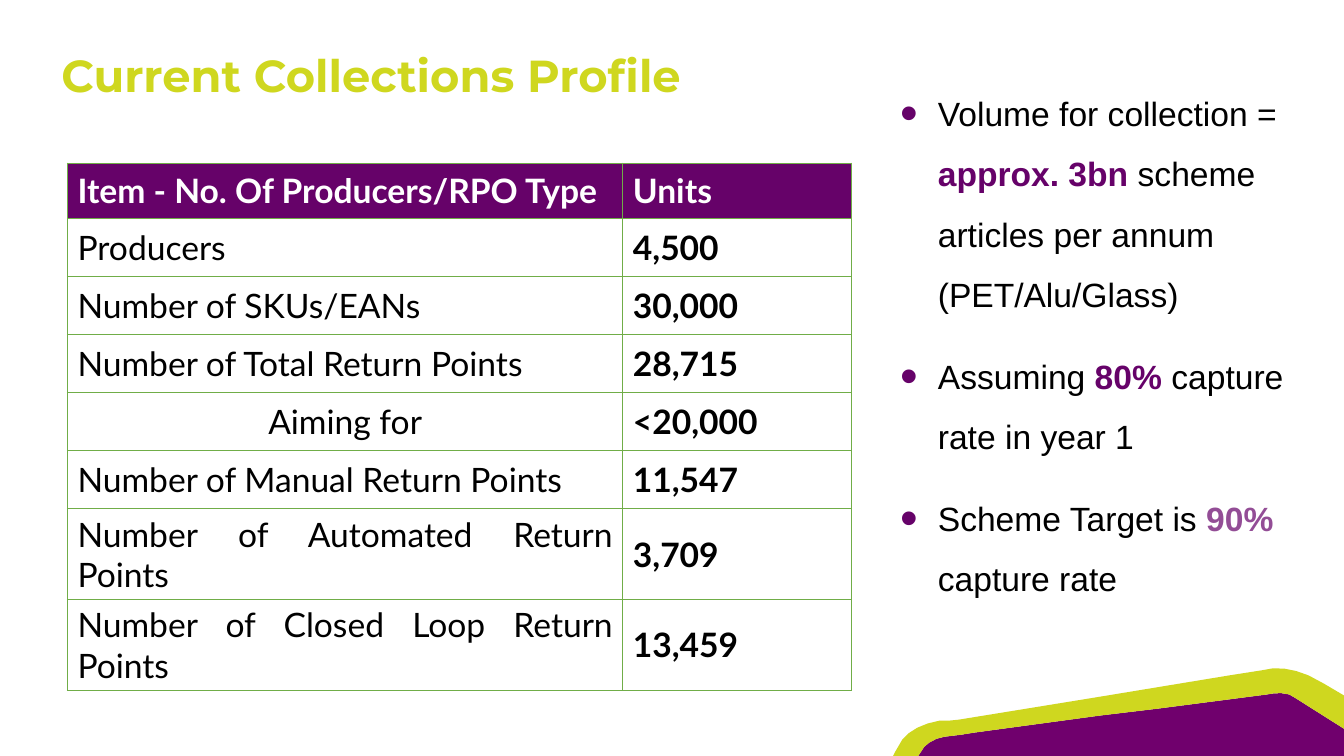
from lxml import etree
from pptx import Presentation
from pptx.dml.color import RGBColor
from pptx.enum.text import MSO_ANCHOR, PP_ALIGN
from pptx.oxml.ns import qn
from pptx.util import Pt

MIDDLE = MSO_ANCHOR.MIDDLE
JUSTIFY, CENTER = PP_ALIGN.JUSTIFY, PP_ALIGN.CENTER
COLORS = {"lime": "CFD71F", "plum": "70006D", "head": "660269", "mauve": "934D96",
          "grid": "70AD47", "black": "000000", "white": "FFFFFF"}


def style(run, face, size, color, bold=False):
    font = run.font
    font.name, font.size, font.bold = face, Pt(size), bold
    font.color.rgb = RGBColor.from_string(COLORS[color])


def add(parent, tag, **attrs):
    return etree.SubElement(parent, qn(tag), attrs)


deck = Presentation()
deck.slide_width, deck.slide_height = Pt(960), Pt(540)
slide = deck.slides.add_slide(deck.slide_layouts[6])
shapes = slide.shapes

# Title
title = shapes.add_textbox(Pt(36.7), Pt(30.2), Pt(738), Pt(46)).text_frame
title.word_wrap = True
title.text = "Current Collections Profile"
style(title.paragraphs[0].runs[0], "Montserrat", 32, "lime", True)

# Corner swoosh: a plum body with a lime band along its upper edge
inner = [(655.9, 540), (660.2, 533.5), (663.8, 530.5), (668.9, 527.8), (674.6, 526.3),
         (686.2, 524.9), (695.5, 523.4), (785.5, 511.2), (827.3, 506.2), (905, 496.1),
         (909.4, 495.4), (915, 495.1), (920.9, 496.1), (925.2, 498.6), (960, 520.6)]
outer = [(637.9, 540), (639.4, 537.1), (644.4, 528.5), (649.1, 523.7), (655.3, 519.8),
         (662.7, 516.8), (671, 514.8), (677.5, 514.8), (684.7, 514.1), (782.6, 498.2),
         (878.4, 482.4), (901.4, 478.8), (909.1, 477.4), (917.2, 477.6), (925.8, 479.3),
         (934.6, 482.4), (945.4, 488.2), (960, 496.8)]
for edge, color in ((inner + [(960, 540)], "plum"), (outer + inner[::-1], "lime")):
    points = [(Pt(x), Pt(y)) for x, y in edge]
    build = shapes.build_freeform(*points[0])
    build.add_line_segments(points[1:])
    swoosh = build.convert_to_shape()
    swoosh.shadow.inherit = False
    swoosh.fill.solid()
    swoosh.fill.fore_color.rgb = RGBColor.from_string(COLORS[color])
    swoosh.line.fill.background()

# Bullet list
bullets = [
    [("Volume for collection = ", "black"), ("approx. 3bn ", "head"),
     ("scheme articles per annum (PET/Alu/Glass)", "black")],
    [("Assuming ", "black"), ("80% ", "head"), ("capture rate in year 1", "black")],
    [("Scheme Target is ", "black"), ("90% ", "mauve"), ("capture rate", "black")],
]
notes = shapes.add_textbox(Pt(637.9), Pt(89.7), Pt(284.4), Pt(300)).text_frame
notes.word_wrap = True
notes.vertical_anchor = MIDDLE
notes.margin_left = notes.margin_right = Pt(5)
notes.margin_top = notes.margin_bottom = Pt(2.2)
for i, parts in enumerate(bullets):
    para = notes.add_paragraph() if i else notes.paragraphs[0]
    props = para._p.get_or_add_pPr()
    props.set("marL", str(Pt(27)))
    props.set("indent", str(Pt(-27)))
    add(add(props, "a:buClr"), "a:srgbClr", val=COLORS["head"])
    add(props, "a:buSzPct", val="150000")
    add(props, "a:buFont", typeface="Arial")
    add(props, "a:buChar", char="•")
    para.line_spacing = 1.5
    if i:
        para.space_before = Pt(15)
    for text, color in parts:
        run = para.add_run()
        run.text = text
        style(run, "Arial", 24, color, color != "black")

# Table
rows = [
    ("Item - No. Of Producers/RPO Type", "Units", 39.4),
    ("Producers", "4,500", 41.5),
    ("Number of SKUs/EANs", "30,000", 41.5),
    ("Number of Total Return Points", "28,715", 41.5),
    ("Aiming for", "<20,000", 41.5),
    ("Number of Manual Return Points", "11,547", 41.5),
    ("Number of Automated Return Points", "3,709", 64.8),
    ("Number of Closed Loop Return Points", "13,459", 64.8),
]
total = sum(row[2] for row in rows)
table = shapes.add_table(len(rows), 2, Pt(48.2), Pt(116.6), Pt(560.2), Pt(total)).table
table.horz_banding = False
table.columns[0].width, table.columns[1].width = Pt(396.7), Pt(163.5)
for r, (item, units, height) in enumerate(rows):
    table.rows[r].height = Pt(height)
    for c, text in enumerate((item, units)):
        cell = table.cell(r, c)
        cell.text = text
        cell.vertical_anchor = MIDDLE
        para = cell.text_frame.paragraphs[0]
        para.alignment = CENTER if text == "Aiming for" else JUSTIFY
        style(para.runs[0], "Lato", 24, "black" if r else "white", r == 0 or c == 1)
        props = cell._tc.get_or_add_tcPr()
        for side in ("a:lnL", "a:lnR", "a:lnT", "a:lnB"):
            line = add(props, side, w=str(Pt(1)))
            add(add(line, "a:solidFill"), "a:srgbClr", val=COLORS["grid"])
        if r:
            cell.fill.background()
        else:
            cell.fill.solid()
            cell.fill.fore_color.rgb = RGBColor.from_string(COLORS["head"])

deck.save("out.pptx")
